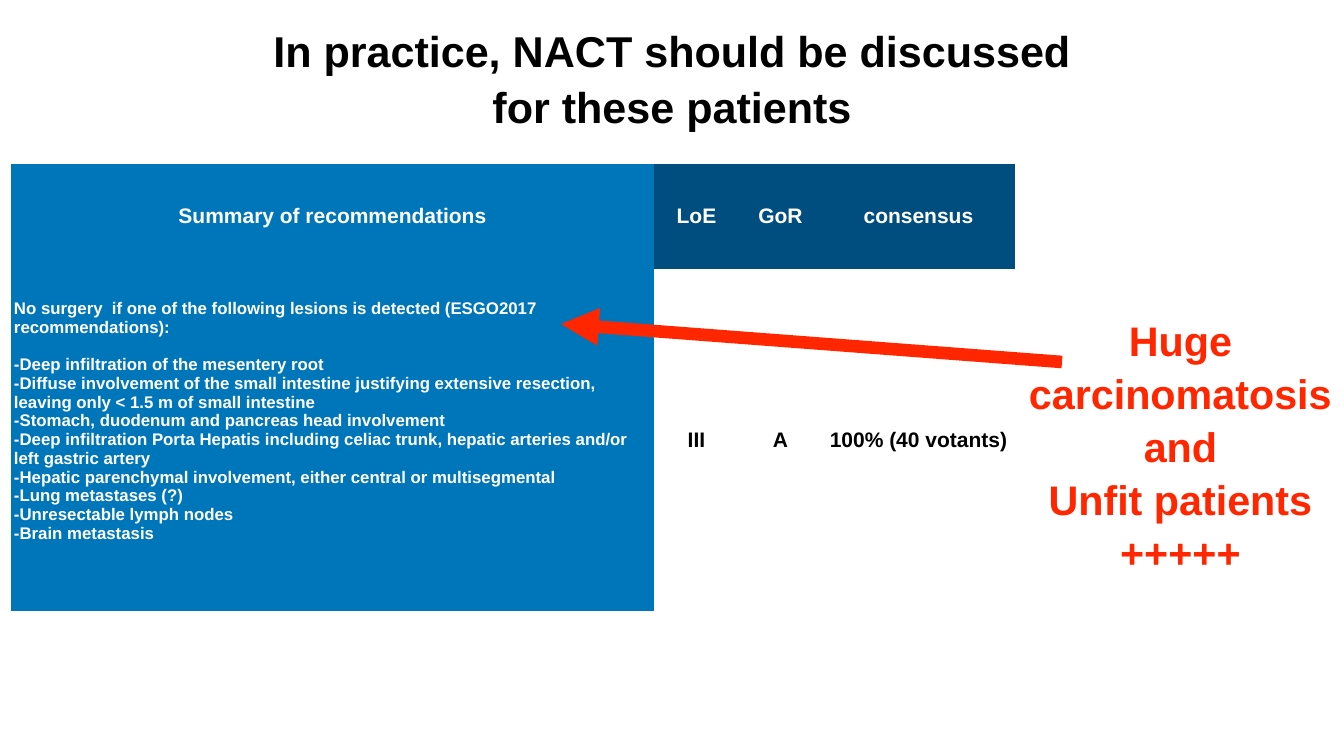
from pptx import Presentation
from pptx.dml.color import RGBColor
from pptx.enum.shapes import MSO_CONNECTOR
from pptx.enum.text import MSO_ANCHOR, PP_ALIGN
from pptx.oxml.ns import qn
from pptx.util import Emu, Pt
from lxml.etree import SubElement

# Content
TITLE = "In practice, NACT should be discussed for these patients"
HEADER = ["Summary of recommendations", "LoE", "GoR", "consensus"]
CRITERIA = [
    "No surgery  if one of the following lesions is detected (ESGO2017 recommendations):",
    "-Deep infiltration of the mesentery root",
    "-Diffuse involvement of the small intestine justifying extensive resection, "
    "leaving only < 1.5 m of small intestine",
    "-Stomach, duodenum and pancreas head involvement",
    "-Deep infiltration Porta Hepatis including celiac trunk, hepatic arteries "
    "and/or left gastric artery",
    "-Hepatic parenchymal involvement, either central or multisegmental",
    "-Lung metastases (?)",
    "-Unresectable lymph nodes",
    "-Brain metastasis",
]
ROWS = [HEADER, ["\n".join(CRITERIA), "III", "A", "100% (40 votants)"]]
CALLOUT = "Huge carcinomatosis and\nUnfit patients\n+++++"

COL_WIDTHS = [643, 85, 83, 193]
ROW_HEIGHTS = [105, 342]

FONT = "Arial"
BLACK = RGBColor(0x00, 0x00, 0x00)
WHITE = RGBColor(0xFF, 0xFF, 0xFF)
NAVY = RGBColor(0x00, 0x4D, 0x80)
BLUE = RGBColor(0x00, 0x76, 0xBA)
RED = RGBColor(0xFF, 0x26, 0x00)


def px(n):
    return Emu(round(n * 914400 / 50.4))


def set_margins(box, n):
    box.margin_left = box.margin_right = box.margin_top = box.margin_bottom = px(n)


def write(tf, text, size, color, align=PP_ALIGN.CENTER, spacing=None):
    tf.text = text
    tf.word_wrap = True
    for p in tf.paragraphs:
        p.alignment = align
        if spacing:
            p.line_spacing = spacing
        for r in p.runs:
            r.font.name = FONT
            r.font.size = Pt(size)
            r.font.bold = True
            r.font.color.rgb = color


def add_text(s, box, text, size, color, margin):
    tf = s.shapes.add_textbox(*map(px, box)).text_frame
    set_margins(tf, margin)
    tf.vertical_anchor = MSO_ANCHOR.MIDDLE
    write(tf, text, size, color, spacing=1.07)


def add_recommendations(s):
    table = s.shapes.add_table(
        len(ROWS), len(COL_WIDTHS), px(11), px(164),
        px(sum(COL_WIDTHS)), px(sum(ROW_HEIGHTS))).table
    table.horz_banding = False
    for col, width in zip(table.columns, COL_WIDTHS):
        col.width = px(width)
    for row, height in zip(table.rows, ROW_HEIGHTS):
        row.height = px(height)

    for i, row in enumerate(ROWS):
        for j, text in enumerate(row):
            cell = table.cell(i, j)
            set_margins(cell, 3)
            cell.vertical_anchor = MSO_ANCHOR.MIDDLE
            cell.fill.solid()
            cell.fill.fore_color.rgb = BLUE if j == 0 else (NAVY, WHITE)[i]
            is_list = (i, j) == (1, 0)
            write(cell.text_frame, text, 24 if is_list else 30,
                  WHITE if i == 0 or j == 0 else BLACK,
                  PP_ALIGN.LEFT if is_list else PP_ALIGN.CENTER)

            # No visible cell borders
            tc_pr = cell._tc.get_or_add_tcPr()
            for k, side in enumerate(("a:lnL", "a:lnR", "a:lnT", "a:lnB")):
                ln = tc_pr.makeelement(qn(side), {"w": "0"})
                SubElement(ln, qn("a:noFill"))
                tc_pr.insert(k, ln)

    # Gap after the introduction and room below the list
    criteria = table.cell(1, 0)
    criteria.text_frame.paragraphs[0].space_after = Pt(27)
    criteria.margin_bottom = px(41)


def add_arrow(s, start, end):
    line = s.shapes.add_connector(
        MSO_CONNECTOR.STRAIGHT, *map(px, start), *map(px, end))
    line.line.color.rgb = RED
    line.line.width = Pt(18)
    SubElement(line.line._get_or_add_ln(), qn("a:tailEnd"), type="triangle")
    SubElement(line._element.spPr, qn("a:effectLst"))


def main():
    prs = Presentation()
    prs.slide_width, prs.slide_height = px(1344), px(756)
    s = prs.slides.add_slide(prs.slide_layouts[6])

    add_text(s, (242, 20, 860, 113), TITLE, 61.6, BLACK, 4)
    add_recommendations(s)
    add_text(s, (1025, 314, 311, 260), CALLOUT, 59, RED, 3)
    add_arrow(s, (1062, 362), (561, 324))

    prs.save("out.pptx")


if __name__ == "__main__":
    main()
